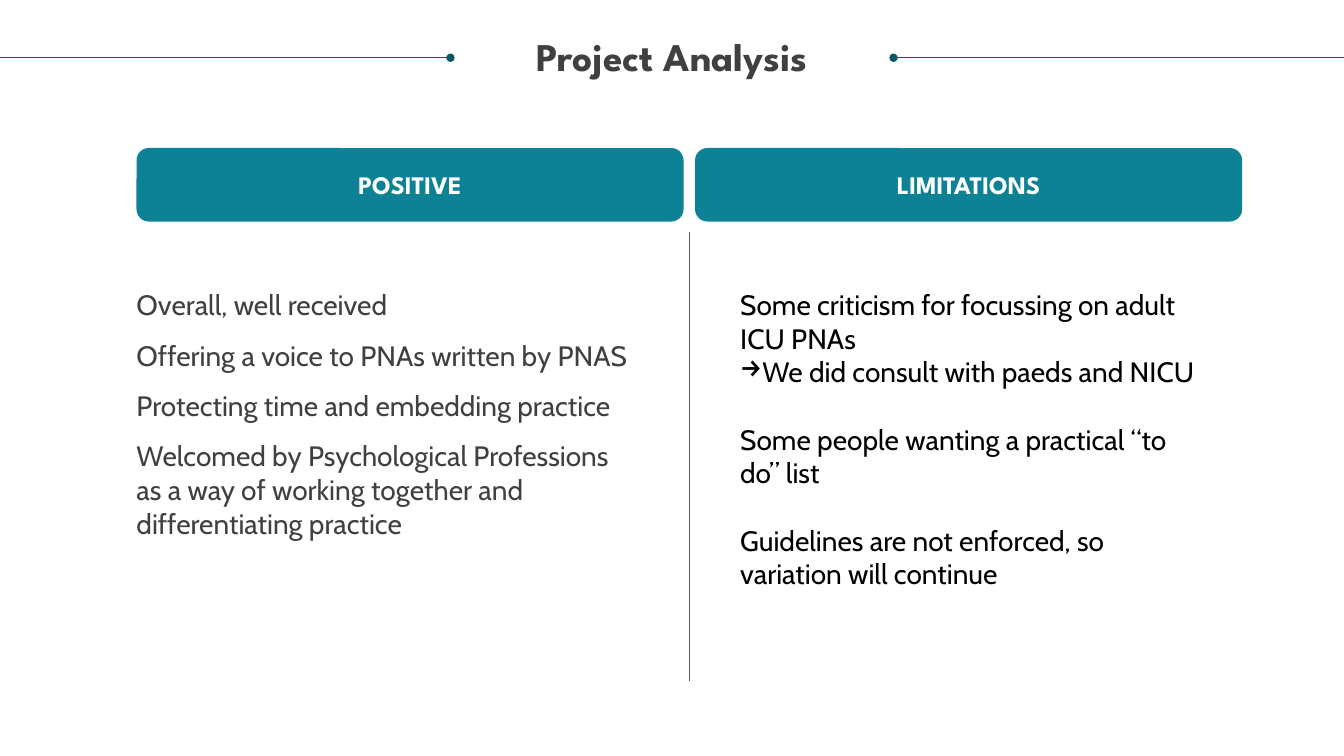
"""Build the Project Analysis slide: positives beside limitations."""
from dataclasses import dataclass

from pptx import Presentation
from pptx.dml.color import RGBColor
from pptx.enum.shapes import MSO_CONNECTOR, MSO_SHAPE
from pptx.enum.text import MSO_ANCHOR, PP_ALIGN
from pptx.oxml.xmlchemy import OxmlElement
from pptx.slide import Slide
from pptx.text.text import TextFrame
from pptx.util import Emu, Pt

TEAL, DARK_TEAL, GREY, RULE_GREY = "0D8295", "085764", "404040", "585858"
WHITE, BLACK = "FFFFFF", "000000"
HEADING, BODY = "League Spartan", "Cabin"


@dataclass(frozen=True)
class Para:
    text: str
    before: int = 0
    bullet: str = ""


@dataclass(frozen=True)
class TextStyle:
    font: str
    size: int
    color: str
    bold: bool = False
    align: PP_ALIGN = PP_ALIGN.LEFT
    spacing: float = 1.0


@dataclass(frozen=True)
class TextBlock:
    box: tuple[int, int, int, int]
    style: TextStyle
    paras: list[Para]


@dataclass(frozen=True)
class Header:
    left: int
    text: str


@dataclass(frozen=True)
class Rule:
    start: tuple[int, int]
    end: tuple[int, int]
    color: str
    dot: str = ""


TITLE = TextStyle(HEADING, 28, GREY, True, PP_ALIGN.CENTER, 0.9)
HEADER = TextStyle(HEADING, 18, WHITE, True, PP_ALIGN.CENTER)

HEADERS = [Header(130, "POSITIVE"), Header(662, "LIMITATIONS")]

RULES = [
    Rule((851, 55), (1280, 55), DARK_TEAL, "headEnd"),
    Rule((0, 55), (429, 55), DARK_TEAL, "tailEnd"),
    Rule((657, 221), (657, 649), RULE_GREY),
]

BLOCKS = [
    TextBlock((24, 36, 1232, 70), TITLE, [Para("Project Analysis")]),
    TextBlock((130, 274, 479, 242), TextStyle(BODY, 20, GREY), [
        Para("Overall, well received", 12),
        Para("Offering a voice to PNAs written by PNAS", 12),
        Para("Protecting time and embedding practice", 12),
        Para("Welcomed by Psychological Professions as a way of working "
             "together and differentiating practice", 12),
    ]),
    TextBlock((705, 274, 437, 291), TextStyle(BODY, 20, BLACK), [
        Para("Some criticism for focussing on adult ICU PNAs"),
        Para("We did consult with paeds and NICU", bullet="→"),
        Para("Some people wanting a practical “to do” list", 24),
        Para("Guidelines are not enforced, so variation will continue", 24),
    ]),
]


def px(n: int) -> Emu:
    """Turn px into EMU."""
    return Emu(n * 9525)


def rgb(color: str) -> RGBColor:
    """Turn a hex string into a colour."""
    return RGBColor.from_string(color)


def write(tf: TextFrame, paras: list[Para], style: TextStyle) -> None:
    """Fill a text frame with styled paragraphs."""
    tf.word_wrap = True
    for i, para in enumerate(paras):
        p = tf.add_paragraph() if i else tf.paragraphs[0]
        layout = {"alignment": style.align, "line_spacing": style.spacing,
                  "space_before": Pt(para.before)}
        for name, value in layout.items():
            setattr(p, name, value)
        if para.bullet:
            bu = OxmlElement("a:buChar")
            bu.set("char", para.bullet)
            p._p.get_or_add_pPr().append(bu)
        r = p.add_run()
        r.text = para.text
        font = {"name": style.font, "size": Pt(style.size), "bold": style.bold}
        for name, value in font.items():
            setattr(r.font, name, value)
        r.font.color.rgb = rgb(style.color)


def add_block(s: Slide, block: TextBlock) -> None:
    """Add a text box without margins."""
    tf = s.shapes.add_textbox(*map(px, block.box)).text_frame
    for side in ("left", "top", "right", "bottom"):
        setattr(tf, f"margin_{side}", 0)
    write(tf, block.paras, block.style)


def add_header(s: Slide, header: Header) -> None:
    """Add a rounded column header."""
    box = map(px, (header.left, 141, 521, 70))
    sp = s.shapes.add_shape(MSO_SHAPE.ROUNDED_RECTANGLE, *box)
    sp.shadow.inherit = False
    sp.fill.solid()
    sp.fill.fore_color.rgb = rgb(TEAL)
    sp.line.fill.background()
    sp.text_frame.vertical_anchor = MSO_ANCHOR.MIDDLE
    write(sp.text_frame, [Para(header.text)], HEADER)


def add_rule(s: Slide, rule: Rule) -> None:
    """Add a thin line, with a dot at one end if named."""
    ends = map(px, (*rule.start, *rule.end))
    cx = s.shapes.add_connector(MSO_CONNECTOR.STRAIGHT, *ends)
    cx.line.width = Pt(0.5)
    cx.line.color.rgb = rgb(rule.color)
    if rule.dot:
        dot = OxmlElement(f"a:{rule.dot}")
        dot.set("type", "oval")
        cx.line._get_or_add_ln().append(dot)
    cx._element.spPr.append(OxmlElement("a:effectLst"))


def main() -> None:
    """Build and save the slide."""
    prs = Presentation()
    prs.slide_width, prs.slide_height = px(1280), px(720)
    s = prs.slides.add_slide(prs.slide_layouts[6])
    for rule in RULES:
        add_rule(s, rule)
    for header in HEADERS:
        add_header(s, header)
    for block in BLOCKS:
        add_block(s, block)
    prs.save("out.pptx")


if __name__ == "__main__":
    main()
